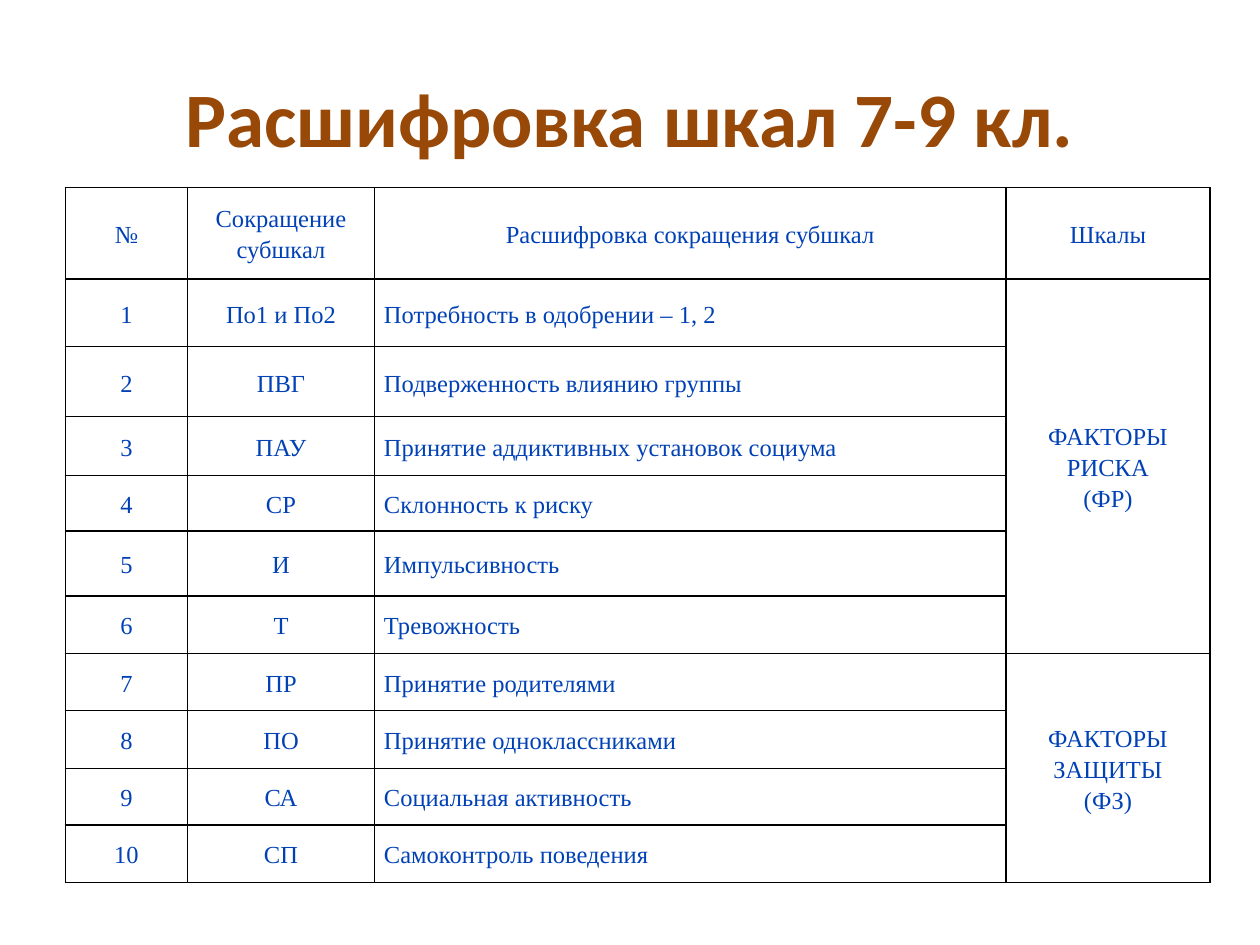
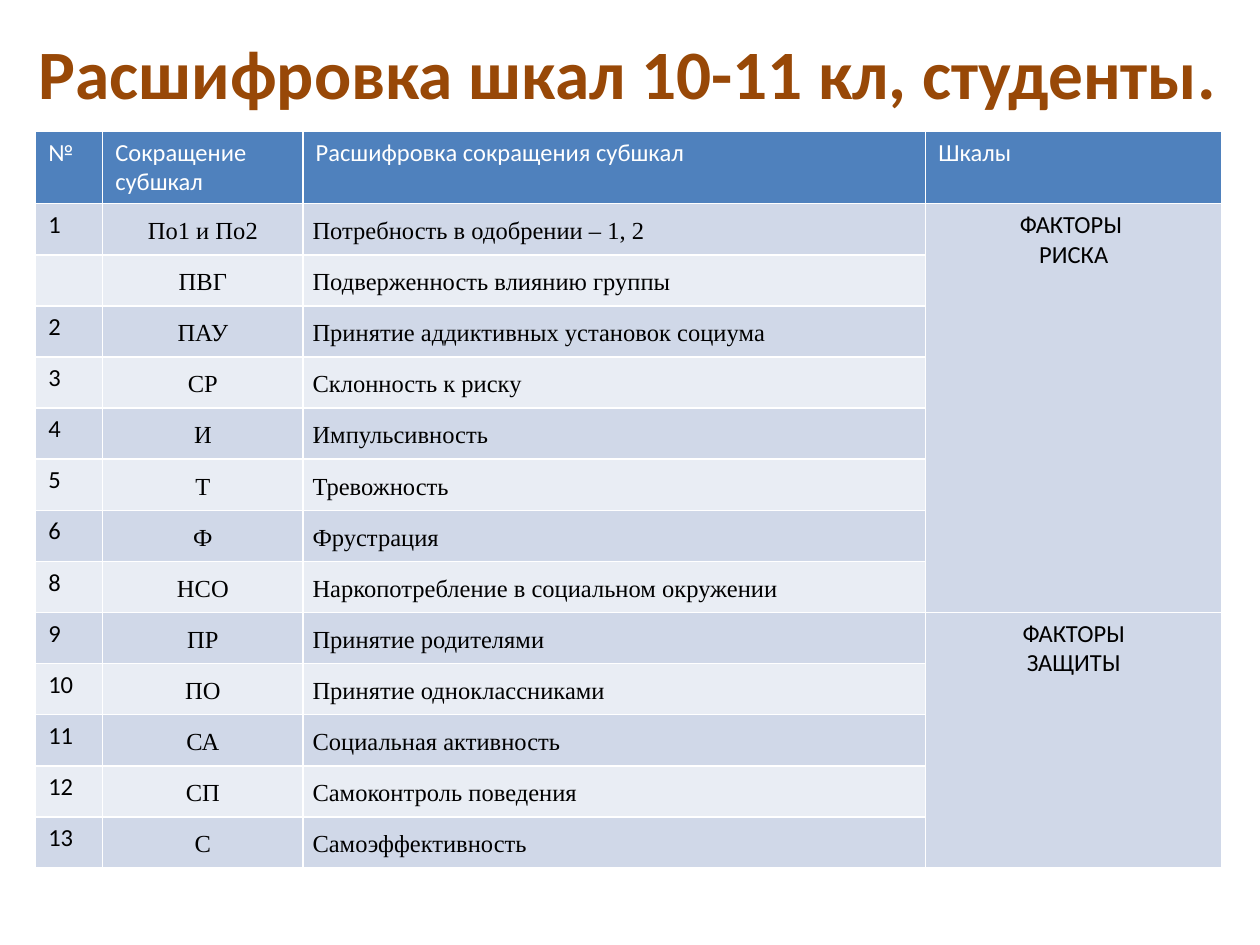
from dataclasses import dataclass, replace

from lxml import etree
from pptx import Presentation
from pptx import util as u
from pptx.dml.color import RGBColor
from pptx.enum import text as t
from pptx.oxml.ns import qn

# Content
HEADINGS = ("№", "Сокращение субшкал", "Расшифровка сокращения субшкал", "Шкалы")
RISK = [
    ("По1 и По2", "Потребность в одобрении – 1, 2"),
    ("ПВГ", "Подверженность влиянию группы"),
    ("ПАУ", "Принятие аддиктивных установок социума"),
    ("СР", "Склонность к риску"),
    ("И", "Импульсивность"),
    ("Т", "Тревожность"),
]
RISK_SENIOR = RISK + [
    ("Ф", "Фрустрация"),
    ("НСО", "Наркопотребление в социальном окружении"),
]
PROTECTION = [
    ("ПР", "Принятие родителями"),
    ("ПО", "Принятие одноклассниками"),
    ("СА", "Социальная активность"),
    ("СП", "Самоконтроль поведения"),
]
PROTECTION_SENIOR = PROTECTION + [("С", "Самоэффективность")]


# Theme
@dataclass(frozen=True)
class Theme:
    sans: str = "Calibri"
    serif: str = "Times New Roman"
    title: str = "984807"
    ink: str = "0041B6"
    black: str = "000000"
    white: str = "FFFFFF"
    header: str = "4F81BD"
    bands: tuple = ("D0D8E8", "E9EDF4")
    body_size: float = 14
    border: float = 1


THEME = Theme()


@dataclass(frozen=True)
class CellStyle:
    font: str
    color: str
    centred: bool = False
    compact: bool = True  # middle anchor, narrow margins, looser lines
    gap: float = 0


# Cell styles: one for the header, then one for each column
SERIF_LEFT = CellStyle(THEME.serif, THEME.ink)
SERIF_MID = replace(SERIF_LEFT, centred=True)
SANS_LEFT = CellStyle(THEME.sans, THEME.black, compact=False)

SLIDES = [
    dict(
        title="Расшифровка шкал 7-9 кл.",
        title_size=44,
        title_box=(1.27, 0.76, 22.86, 3.18),
        numbers=[str(n) for n in range(1, 11)],
        groups=[("ФАКТОРЫ РИСКА\n(ФР)", RISK), ("ФАКТОРЫ ЗАЩИТЫ\n(ФЗ)", PROTECTION)],
        corner=(1.32, 3.78),
        columns=(2.46, 3.77, 12.73, 4.11),
        rows=(1.84, 1.37, 1.41, 1.19, 1.11, 1.31, 1.16, 1.15, 1.17, 1.14, 1.16),
        header_style=replace(SERIF_MID, gap=6),
        column_styles=(SERIF_MID, SERIF_MID, SERIF_LEFT, SERIF_MID),
        border=THEME.black,
        banded=False,
    ),
    dict(
        title="Расшифровка шкал 10-11 кл, студенты.",
        title_size=39.6,
        title_box=(0.3, 0.46, 24.71, 1.98),
        numbers=["1", "", "2", "3", "4", "5", "6", "8", "9", "10", "11", "12", "13"],
        groups=[("ФАКТОРЫ \nРИСКА", RISK_SENIOR), ("ФАКТОРЫ\nЗАЩИТЫ", PROTECTION_SENIOR)],
        corner=(0.72, 2.65),
        columns=(1.35, 4.04, 12.55, 5.97),
        rows=(1.45,) + (1.03,) * 13,
        header_style=replace(SANS_LEFT, color=THEME.white),
        column_styles=(
            SANS_LEFT,
            replace(SERIF_MID, color=THEME.black),
            replace(SERIF_LEFT, color=THEME.black),
            replace(SANS_LEFT, centred=True),
        ),
        border=THEME.white,
        banded=True,
    ),
]


def format_run(run, font, size, color, bold=False):
    run.font.name = font
    run.font.size = u.Pt(size)
    run.font.bold = bold
    run.font.color.rgb = RGBColor.from_string(color)


def add_title(slide, content):
    title = slide.shapes.title
    title.left, title.top, title.width, title.height = map(u.Cm, content["title_box"])
    frame = title.text_frame
    frame.text = content["title"]
    frame.auto_size = t.MSO_AUTO_SIZE.NONE
    frame.word_wrap = True
    frame.vertical_anchor = t.MSO_ANCHOR.MIDDLE
    frame.paragraphs[0].alignment = t.PP_ALIGN.CENTER
    format_run(frame.paragraphs[0].runs[0], THEME.sans, content["title_size"], THEME.title, True)


def set_borders(cell, color):
    props = cell._tc.get_or_add_tcPr()
    for place, side in enumerate(("a:lnL", "a:lnR", "a:lnT", "a:lnB")):
        line = etree.Element(qn(side), w=str(u.Pt(THEME.border)))
        fill = etree.SubElement(line, qn("a:solidFill"))
        etree.SubElement(fill, qn("a:srgbClr"), val=color)
        props.insert(place, line)


def fill_cell(cell, color):
    if color:
        cell.fill.solid()
        cell.fill.fore_color.rgb = RGBColor.from_string(color)
    else:
        cell.fill.background()


def write_cell(cell, words, style):
    cell.text_frame.text = words
    if style.compact:
        cell.vertical_anchor = t.MSO_ANCHOR.MIDDLE
        cell.margin_left = cell.margin_right = u.Cm(0.19)
        cell.margin_top = cell.margin_bottom = 0
    for paragraph in cell.text_frame.paragraphs:
        paragraph.alignment = t.PP_ALIGN.CENTER if style.centred else t.PP_ALIGN.LEFT
        if style.compact:
            paragraph.line_spacing = 1.15
        if style.gap:
            paragraph.space_before = paragraph.space_after = u.Pt(style.gap)
        for run in paragraph.runs:
            format_run(run, style.font, THEME.body_size, style.color)
        if not paragraph.runs:  # keeps an empty cell from stretching its row
            etree.SubElement(paragraph._p, qn("a:endParaRPr"), sz=str(THEME.body_size * 100))


def add_scales(slide, content):
    columns, rows = content["columns"], content["rows"]
    table = slide.shapes.add_table(
        len(rows), len(columns), *map(u.Cm, content["corner"]),
        u.Cm(sum(columns)), u.Cm(sum(rows)),
    ).table
    table.first_row = table.horz_banding = False
    for column, width in zip(table.columns, columns):
        column.width = u.Cm(width)
    for row, height in zip(table.rows, rows):
        row.height = u.Cm(height)

    # Fills and borders
    for r in range(len(rows)):
        for c in range(len(columns)):
            band = THEME.header if r == 0 else THEME.bands[(r - 1) % 2]
            fill_cell(table.cell(r, c), band if content["banded"] else None)
            set_borders(table.cell(r, c), content["border"])

    # Header and subscales
    for c, heading in enumerate(HEADINGS):
        write_cell(table.cell(0, c), heading, content["header_style"])
    subscales = [pair for _, pairs in content["groups"] for pair in pairs]
    for r, (number, pair) in enumerate(zip(content["numbers"], subscales), 1):
        for c, words in enumerate((number, *pair)):
            write_cell(table.cell(r, c), words, content["column_styles"][c])

    # Scale groups span their subscales
    first = 1
    for label, pairs in content["groups"]:
        group = table.cell(first, 3)
        group.merge(table.cell(first + len(pairs) - 1, 3))
        write_cell(group, label, content["column_styles"][3])
        first += len(pairs)


def main():
    deck = Presentation()
    deck.slide_width, deck.slide_height = u.Cm(25.4), u.Cm(19.05)
    for content in SLIDES:
        slide = deck.slides.add_slide(deck.slide_layouts[5])
        add_title(slide, content)
        add_scales(slide, content)
    deck.save("out.pptx")


if __name__ == "__main__":
    main()
